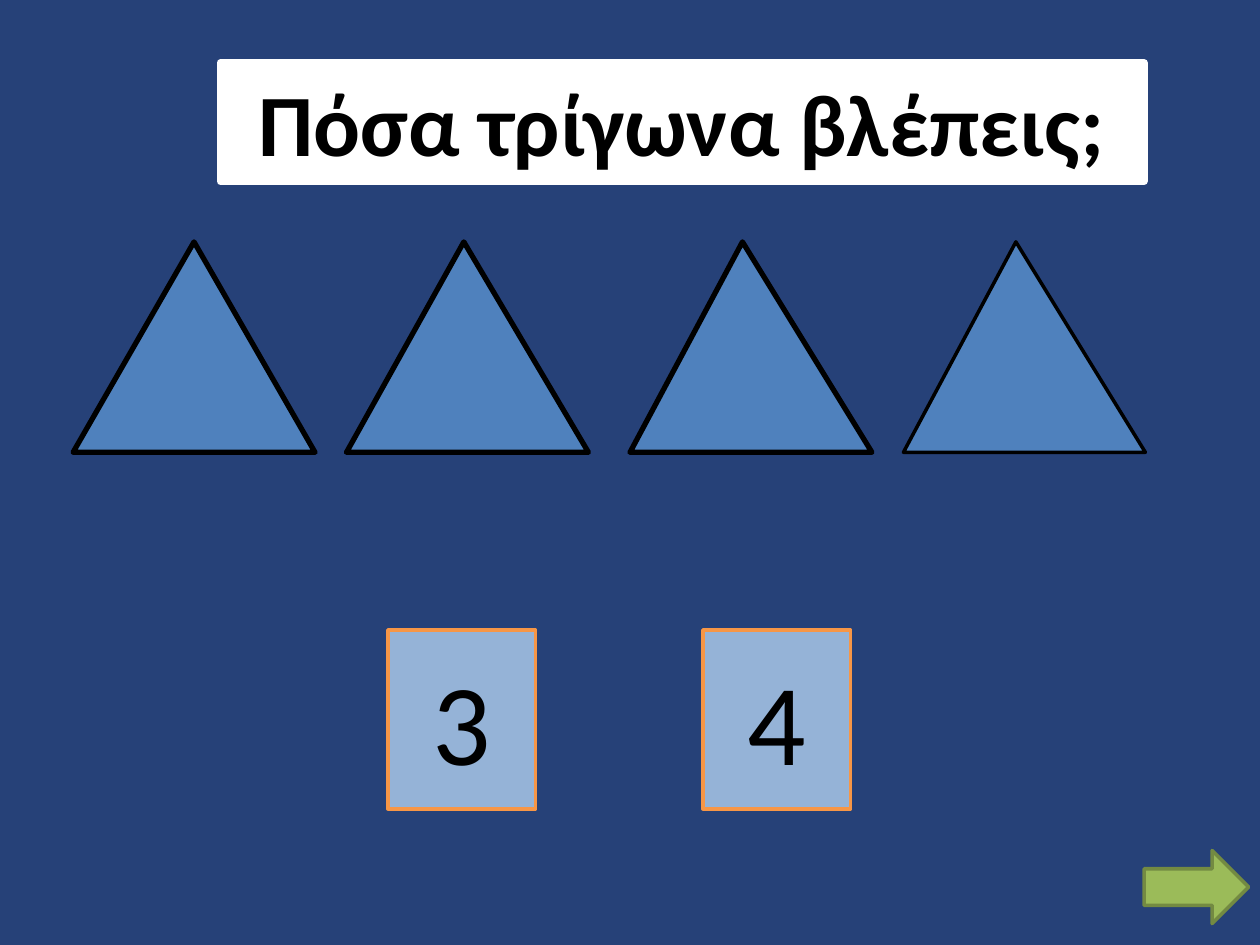
from dataclasses import dataclass

import pptx
import pptx.dml.color
import pptx.enum.shapes
import pptx.enum.text
import pptx.util

Inches = pptx.util.Inches
SHAPE = pptx.enum.shapes.MSO_SHAPE
ANCHOR = pptx.enum.text.MSO_ANCHOR

COLORS = {
    "background": "264178",
    "triangle": "4F81BD",
    "answer": "95B3D7",
    "answer_line": "F79646",
    "arrow": "9BBB59",
    "arrow_line": "738A42",
    "white": "FFFFFF",
    "black": "000000",
}


@dataclass
class Triangle:
    left: float
    apex: float
    line_width: float


@dataclass
class Answer:
    left: float
    text: str


TRIANGLES = [
    Triangle(0.58, 0.5, 3),
    Triangle(2.75, 0.485, 3),
    Triangle(5, 0.465, 3),
    Triangle(7.17, 0.465, 2),
]
ANSWERS = [Answer(3.08, "3"), Answer(5.58, "4")]


def rgb(name: str) -> pptx.dml.color.RGBColor:
    return pptx.dml.color.RGBColor.from_string(COLORS[name])


def add_shape(slide, kind, left: float, top: float, width: float, height: float,
              fill: str, line: str, line_width: float = 2):
    sp = slide.shapes.add_shape(
        kind, Inches(left), Inches(top), Inches(width), Inches(height))
    sp.shadow.inherit = False
    sp.fill.solid()
    sp.fill.fore_color.rgb = rgb(fill)
    sp.line.color.rgb = rgb(line)
    sp.line.width = pptx.util.Pt(line_width)
    return sp


def set_text(sp, text: str, *, size: float, bold: bool = False,
             color: str = "black", font: str = "Calibri",
             anchor=ANCHOR.MIDDLE) -> None:
    tf = sp.text_frame
    tf.word_wrap = True
    tf.vertical_anchor = anchor
    p = tf.paragraphs[0]
    p.alignment = pptx.enum.text.PP_ALIGN.CENTER
    r = p.add_run()
    r.text = text
    r.font.name = font
    r.font.size = pptx.util.Pt(size)
    r.font.bold = bold
    r.font.color.rgb = rgb(color)


def add_triangle(slide, triangle: Triangle) -> None:
    sp = add_shape(slide, SHAPE.ISOSCELES_TRIANGLE, triangle.left, 1.92, 1.92, 1.67,
                   "triangle", "black", triangle.line_width)
    sp.adjustments[0] = triangle.apex


def add_answer(slide, answer: Answer) -> None:
    sp = add_shape(slide, SHAPE.RECTANGLE, answer.left, 5, 1.17, 1.42,
                   "answer", "answer_line")
    set_text(sp, answer.text, size=66)


def main() -> None:
    prs = pptx.Presentation()
    prs.slide_width, prs.slide_height = Inches(10), Inches(7.5)
    s = prs.slides.add_slide(prs.slide_layouts[6])
    s.background.fill.solid()
    s.background.fill.fore_color.rgb = rgb("background")

    for triangle in TRIANGLES:
        add_triangle(s, triangle)
    for answer in ANSWERS:
        add_answer(s, answer)

    question = add_shape(s, SHAPE.RECTANGLE, 1.75, 0.5, 7.33, 0.94,
                         "white", "white", 4.5)
    set_text(question, "Πόσα τρίγωνα βλέπεις;", size=50, bold=True,
             anchor=ANCHOR.TOP)
    question.text_frame.auto_size = pptx.enum.text.MSO_AUTO_SIZE.SHAPE_TO_FIT_TEXT

    add_shape(s, SHAPE.RIGHT_ARROW, 9.08, 6.75, 0.83, 0.58, "arrow", "arrow_line")
    prs.save("out.pptx")


if __name__ == "__main__":
    main()
